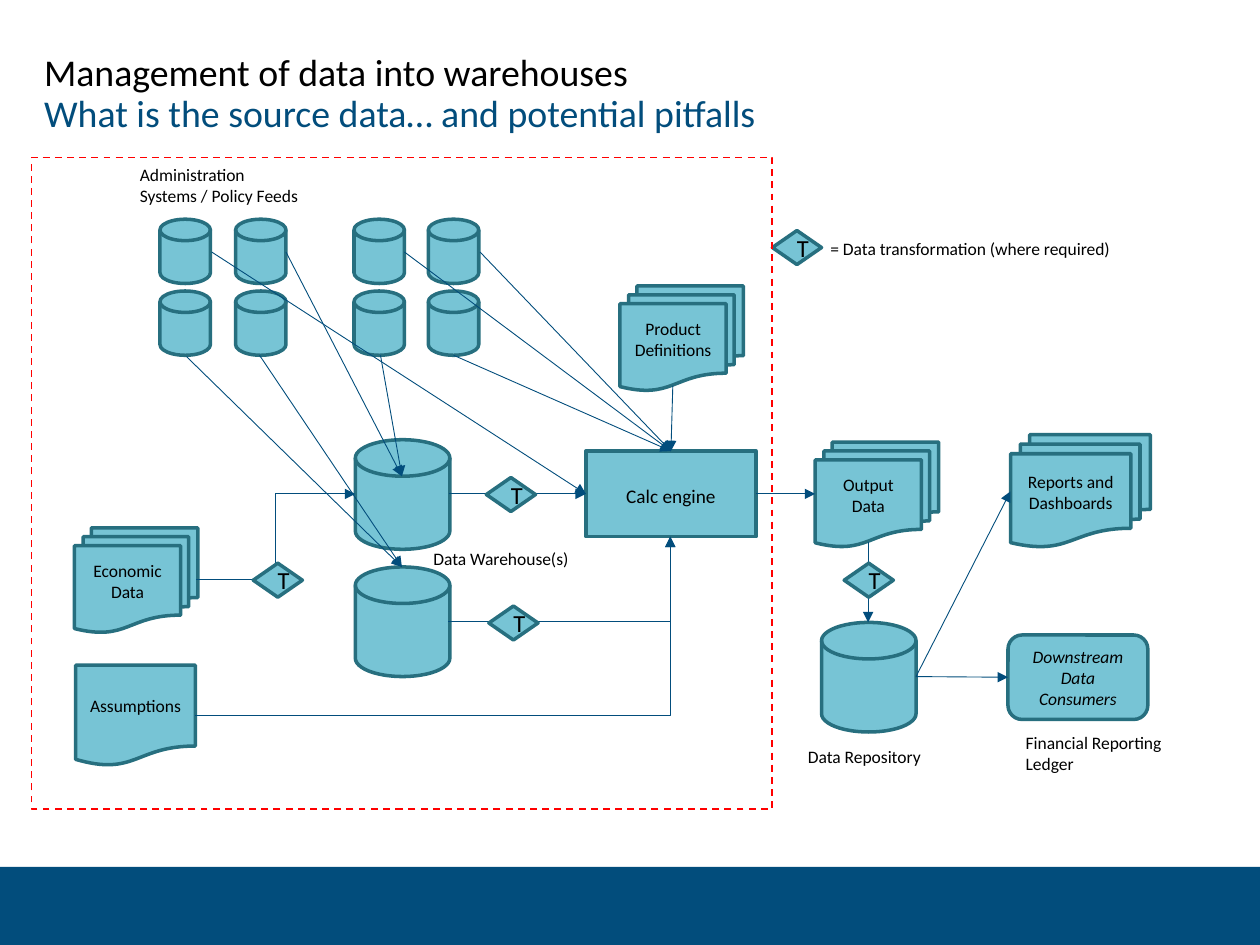
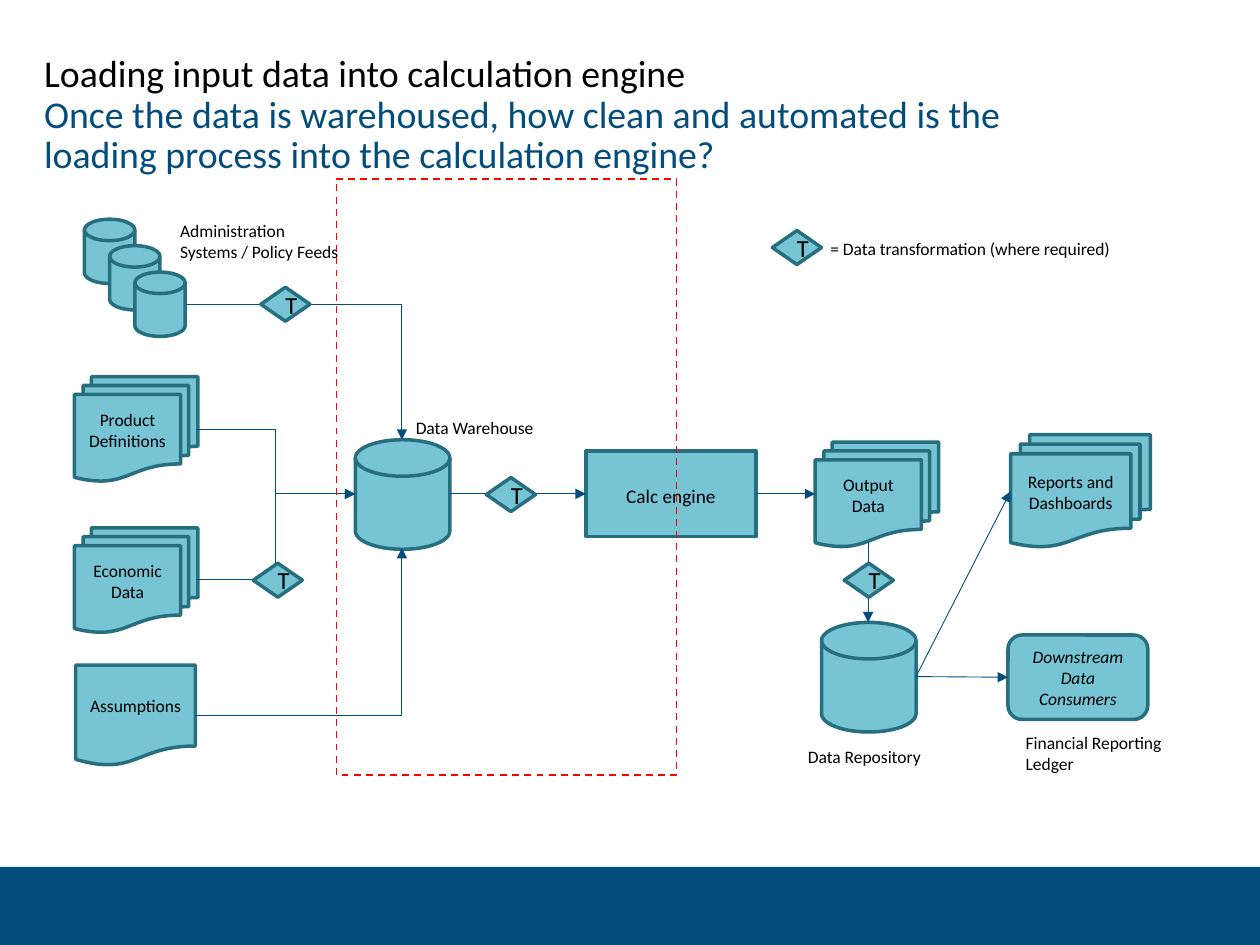
from lxml import etree
from pptx import Presentation
from pptx.dml.color import RGBColor
from pptx.enum.dml import MSO_LINE
from pptx.enum.shapes import MSO_CONNECTOR, MSO_SHAPE
from pptx.enum.text import MSO_ANCHOR, MSO_AUTO_SIZE, PP_ALIGN
from pptx.oxml.ns import qn
from pptx.util import Inches, Pt

C = {"navy": "024D7C", "teal": "77C4D5", "edge": "276F7F", "black": "000000", "red": "FF0000"}
FONT = "Calibri"
LEFT, CENTER = PP_ALIGN.LEFT, PP_ALIGN.CENTER
MIDDLE = MSO_ANCHOR.MIDDLE
RECT, ROUND = MSO_SHAPE.RECTANGLE, MSO_SHAPE.ROUNDED_RECTANGLE
DISK = MSO_SHAPE.FLOWCHART_MAGNETIC_DISK
DOCUMENT, DOCUMENTS = MSO_SHAPE.FLOWCHART_DOCUMENT, MSO_SHAPE.FLOWCHART_MULTIDOCUMENT
DIAMOND = MSO_SHAPE.FLOWCHART_DECISION
STRAIGHT, ELBOW = MSO_CONNECTOR.STRAIGHT, MSO_CONNECTOR.ELBOW
DASH = MSO_LINE.DASH
TOP, SIDE_LEFT, SIDE_RIGHT = 0, 1, 3

DISK_SIZE, FEED_SIZE = (0.75, 0.87), (0.4, 0.51)
DOCS_SIZE, DIAMOND_SIZE = (0.98, 0.83), (0.39, 0.27)
FLOW_Y = 3.92
WAREHOUSE_X, CALC_X = 3.19, 5.32


def rgb(name):
    return RGBColor.from_string(C[name])


def inches(*values):
    return [Inches(v) for v in values]


def write(tf, text, size=10, colors=("black",), align=LEFT, italic=False,
          line_spacing=None, space_after=None):
    tf.word_wrap = True
    for i, line in enumerate(text.split("\n")):
        p = tf.paragraphs[0] if i == 0 else tf.add_paragraph()
        p.alignment = align
        p.line_spacing = line_spacing
        p.space_after = space_after
        r = p.add_run()
        r.text = line
        r.font.name = FONT
        r.font.size = Pt(size)
        r.font.italic = italic
        r.font.color.rgb = rgb(colors[min(i, len(colors) - 1)])


def add_label(s, text, x, y, w, h, **fmt):
    tf = s.shapes.add_textbox(*inches(x, y, w, h)).text_frame
    tf.margin_left = tf.margin_right = tf.margin_top = tf.margin_bottom = 0
    write(tf, text, **fmt)


def add_node(s, kind, x, y, w, h, text="", **fmt):
    sp = s.shapes.add_shape(kind, *inches(x, y, w, h))
    sp.shadow.inherit = False
    sp.fill.solid()
    sp.fill.fore_color.rgb = rgb("teal")
    sp.line.color.rgb = rgb("edge")
    sp.line.width = Pt(2)
    if text:
        sp.text_frame.vertical_anchor = MIDDLE
        write(sp.text_frame, text, align=CENTER, **fmt)
    return sp


def add_documents(s, text, x, y, w=DOCS_SIZE[0], h=DOCS_SIZE[1]):
    sp = add_node(s, DOCUMENTS, x, y, w, h, text)
    sp.text_frame.margin_bottom = Inches(0.15)


def add_transform(s, x, y):
    add_node(s, DIAMOND, x, y, *DIAMOND_SIZE, "T", size=14)


def add_arrow(s, start, end, kind=STRAIGHT, source=None, target=None):
    cx = s.shapes.add_connector(kind, *inches(*start, *end))
    if source:
        cx.begin_connect(*source)
    if target:
        cx.end_connect(*target)
    cx.line.color.rgb = rgb("navy")
    cx.line.width = Pt(0.5)
    etree.SubElement(cx.line._get_or_add_ln(), qn("a:tailEnd"), type="triangle")
    etree.SubElement(cx._element.spPr, qn("a:effectLst"))
    return cx


def add_corner_arrow(s, start, end):
    cx = add_arrow(s, start, end, ELBOW)
    cx._element.spPr.find(qn("a:prstGeom")).set("prst", "bentConnector2")


def add_focus(s, x, y, w, h):
    sp = s.shapes.add_shape(RECT, *inches(x, y, w, h))
    sp.shadow.inherit = False
    sp.fill.background()
    sp.line.color.rgb = rgb("red")
    sp.line.width = Pt(1)
    sp.line.dash_style = DASH


def add_slide(prs, title, y):
    s = prs.slides.add_slide(prs.slide_layouts[5])
    band = s.shapes.add_shape(RECT, *inches(0, 6.88, 10, 0.62))
    band.shadow.inherit = False
    band.fill.solid()
    band.fill.fore_color.rgb = rgb("navy")
    band.line.fill.background()
    sp = s.shapes.title
    sp.left, sp.top, sp.width, sp.height = inches(0.25, y, 8.62, 0.5)
    sp.text_frame.auto_size = MSO_AUTO_SIZE.NONE
    sp.text_frame.vertical_anchor = MIDDLE
    write(sp.text_frame, title, size=21.6, colors=("black", "navy"), line_spacing=0.9)
    return s


def add_inputs(s):
    add_node(s, DOCUMENT, 0.6, 5.28, 0.95, 0.8, "Assumptions")
    add_documents(s, "Economic Data", 0.59, 4.19)
    add_node(s, DISK, 2.82, 3.49, *DISK_SIZE)
    add_arrow(s, (1.56, 4.6), (2.82, FLOW_Y), ELBOW)
    add_transform(s, 2.01, 4.47)


def add_engine(s):
    calc = add_node(s, RECT, 4.65, 3.58, 1.35, 0.68, "Calc engine", size=11,
                    line_spacing=1.15, space_after=Pt(10))
    add_arrow(s, (3.56, FLOW_Y), (4.65, FLOW_Y), target=(calc, SIDE_LEFT))
    add_transform(s, 3.86, 3.79)
    return calc


def add_outputs(s, calc):
    add_documents(s, "Output Data", 6.47, 3.51)
    add_node(s, DISK, 6.52, 4.94, *DISK_SIZE)
    add_documents(s, "Reports and Dashboards", 8.02, 3.45, 1.11, 0.89)
    consumers = add_node(s, ROUND, 8, 5.04, 1.11, 0.67, "Downstream Data Consumers", italic=True)
    add_label(s, "Data Repository", 6.13, 5.92, 1.46, 0.17, align=CENTER)
    add_label(s, "Financial Reporting\nLedger", 8.14, 5.81, 1.25, 0.34)
    add_arrow(s, (6, FLOW_Y), (6.47, FLOW_Y), source=(calc, SIDE_RIGHT))
    add_arrow(s, (6.89, 4.3), (6.89, 4.94))
    add_arrow(s, (7.27, 5.37), (8, 5.37), target=(consumers, SIDE_LEFT))
    add_arrow(s, (7.27, 5.37), (8.02, 3.9))
    add_transform(s, 6.7, 4.47)


def add_legend(s):
    add_label(s, "= Data transformation (where required)", 6.59, 1.89, 2.71, 0.17)
    add_transform(s, 6.13, 1.83)


def add_pipeline(s):
    add_inputs(s)
    calc = add_engine(s)
    add_outputs(s, calc)
    add_legend(s)
    return calc


def add_feeds_label(s, x, y):
    add_label(s, "Administration\nSystems / Policy Feeds", x, y, 1.41, 0.34)


def build_warehouses(prs):
    s = add_slide(prs, "Management of data into warehouses\n"
                       "What is the source data… and potential pitfalls", 0.5)
    calc = add_pipeline(s)
    add_feeds_label(s, 1.11, 1.3)
    add_label(s, "Data Warehouse(s)", 3.44, 4.35, 1.46, 0.17)
    add_documents(s, "Product Definitions", 4.92, 2.27)
    add_node(s, DISK, 2.82, 4.5, *DISK_SIZE)
    for x in (1.27, 1.87, 2.81, 3.4):
        for y in (1.74, 2.31):
            add_node(s, DISK, x, y, *FEED_SIZE)

    for start in ((3.6, 2.82), (3.81, 2), (3.21, 2), (5.34, 3.06)):
        add_arrow(s, start, (CALC_X, 3.58), target=(calc, TOP))
    add_arrow(s, (1.68, 2), (4.65, FLOW_Y), target=(calc, SIDE_LEFT))
    for start, y in (((3.02, 2.82), 3.78), ((2.27, 2), 3.78),
                     ((2.06, 2.82), 4.5), ((1.48, 2.83), 4.5)):
        add_arrow(s, start, (WAREHOUSE_X, y))
    for start in ((1.55, 5.68), (3.56, 4.93)):
        add_corner_arrow(s, start, (CALC_X, 4.26))
    add_transform(s, 3.88, 4.81)
    add_focus(s, 0.25, 1.25, 5.88, 5.17)


def build_loading(prs):
    s = add_slide(prs, "Loading input data into calculation engine\n"
                       "Once the data is warehoused, how clean and automated is the "
                       "loading process into the calculation engine?", 0.67)
    add_pipeline(s)
    for i in range(3):
        add_node(s, DISK, 0.67 + 0.2 * i, 1.74 + 0.21 * i, *FEED_SIZE)
    add_feeds_label(s, 1.43, 1.75)
    add_label(s, "Data Warehouse", 3.3, 3.31, 1.46, 0.17)
    add_documents(s, "Product Definitions", 0.59, 2.99)
    add_arrow(s, (1.56, 3.41), (2.82, FLOW_Y), ELBOW)
    add_corner_arrow(s, (1.48, 2.42), (WAREHOUSE_X, 3.49))
    add_corner_arrow(s, (1.55, 5.68), (WAREHOUSE_X, 4.35))
    add_transform(s, 2.07, 2.28)
    add_focus(s, 2.67, 1.42, 2.7, 4.73)


def main():
    prs = Presentation()
    prs.slide_width, prs.slide_height = inches(10, 7.5)
    build_warehouses(prs)
    build_loading(prs)
    prs.save("out.pptx")


if __name__ == "__main__":
    main()
